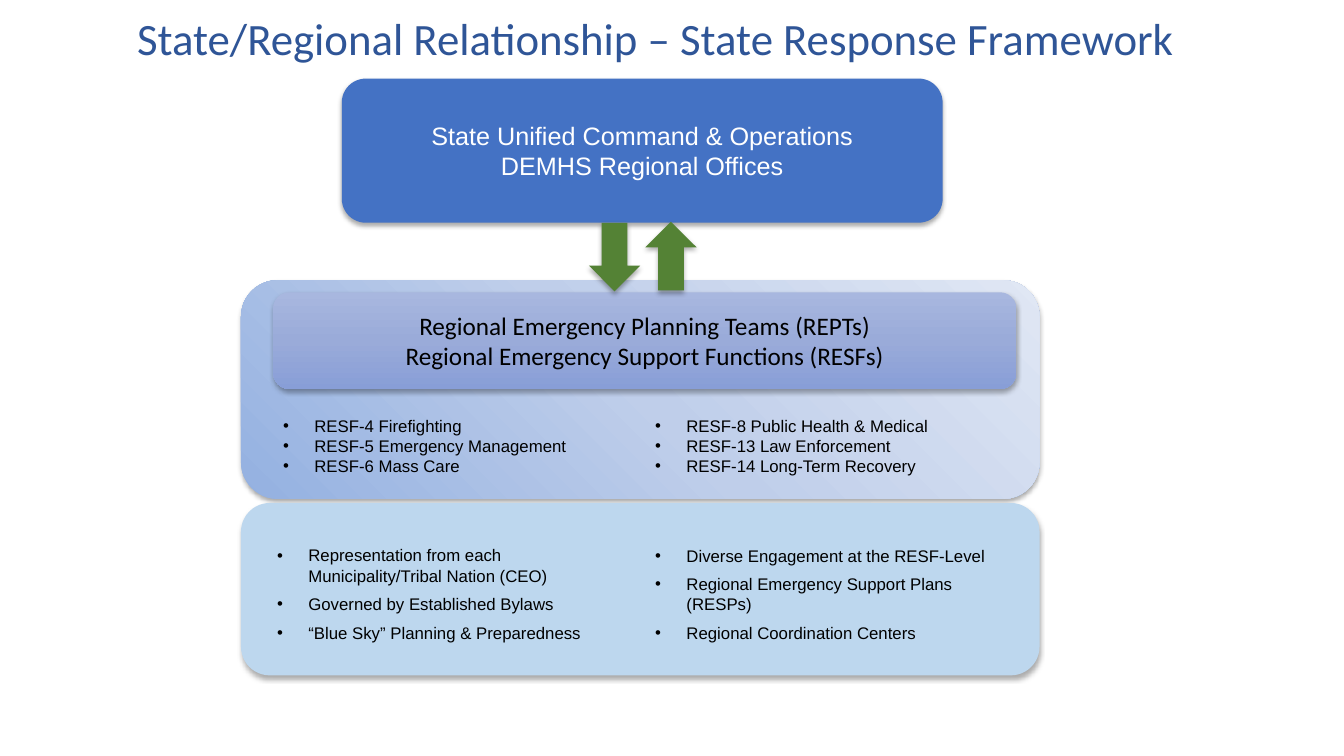
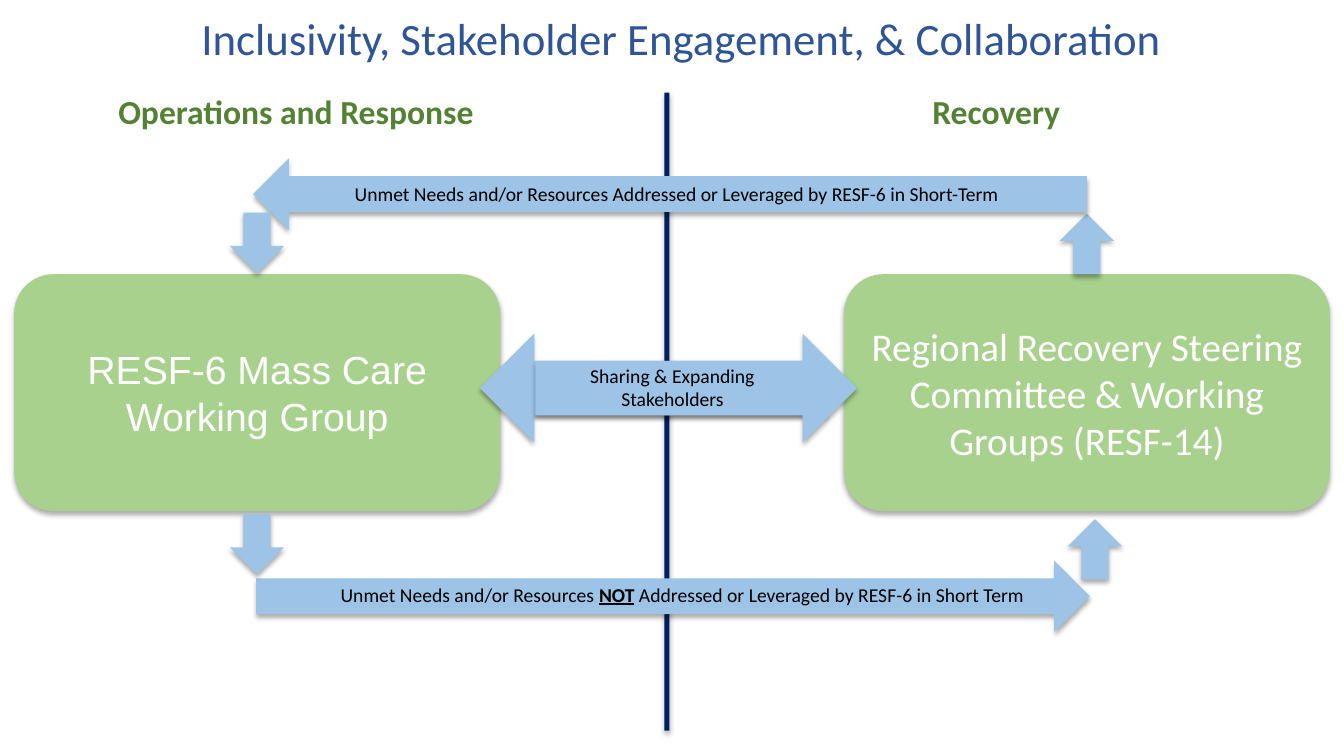
from dataclasses import dataclass

from lxml import etree
from pptx import Presentation
from pptx.dml.color import RGBColor
from pptx.enum.shapes import MSO_SHAPE
from pptx.enum.text import MSO_ANCHOR, PP_ALIGN
from pptx.oxml.ns import qn
from pptx.util import Inches, Pt

ROUND = MSO_SHAPE.ROUNDED_RECTANGLE
RECT = MSO_SHAPE.RECTANGLE
UP, DOWN = MSO_SHAPE.UP_ARROW, MSO_SHAPE.DOWN_ARROW
LEFT, RIGHT = MSO_SHAPE.LEFT_ARROW, MSO_SHAPE.RIGHT_ARROW
MIDDLE, TOP = MSO_ANCHOR.MIDDLE, MSO_ANCHOR.TOP
CENTER, START = PP_ALIGN.CENTER, PP_ALIGN.LEFT


@dataclass(frozen=True)
class Theme:
    # Colours
    title: str = "2F5597"
    white: str = "FFFFFF"
    black: str = "000000"
    blue: str = "4472C4"
    sky: str = "9DC3E6"
    pale: str = "BDD7EE"
    navy: str = "002060"
    green: str = "548235"
    lime: str = "A9D18E"
    panel: tuple = ("94B1E1", "BFCEEA", "E0E7F4")
    band: tuple = ("A8B7DF", "9AABD9", "889ED7")
    # Fonts and type sizes
    sans: str = "Arial"
    text: str = "Calibri"
    huge: int = 32
    large: int = 28
    head: int = 24
    mid: int = 18
    note: int = 14
    small: int = 12


class Deck:
    def __init__(self, theme):
        self.theme = theme
        self.file = Presentation()
        self.file.slide_width = Inches(13.33)
        self.file.slide_height = Inches(7.5)
        self.slide = None

    def page(self, title, width):
        """Start a slide with its title."""
        t = self.theme
        self.slide = self.file.slides.add_slide(self.file.slide_layouts[6])
        self.label((0.99, 0.06, width, 0.64), title, t.huge, t.title)

    def style(self, frame, size, color, font, align, bold=False):
        for para in frame.paragraphs:
            para.alignment = align
            for run in para.runs:
                run.font.size = Pt(size)
                run.font.name = font
                run.font.color.rgb = RGBColor.from_string(color)
                if bold:
                    run.font.bold = True

    def shade(self, shape):
        """Give a shape the soft shadow that falls below it."""
        shape.shadow.inherit = False
        group = shape._element.spPr.find(qn("a:effectLst"))
        outer = etree.SubElement(
            group, qn("a:outerShdw"), blurRad=str(Pt(3.5)), dist=str(Pt(2.2)),
            dir="5400000", algn="t", rotWithShape="0")
        tint = etree.SubElement(outer, qn("a:srgbClr"), val=self.theme.black)
        etree.SubElement(tint, qn("a:alpha"), val="32000")

    def blend(self, shape, colors, angle):
        """Fill with evenly spaced colour stops."""
        shape.fill.gradient()
        shape.fill.gradient_angle = angle
        stops = shape._element.spPr.find(".//" + qn("a:gsLst"))
        for stop in list(stops):
            stops.remove(stop)
        for i, color in enumerate(colors):
            place = str(100000 * i // (len(colors) - 1))
            stop = etree.SubElement(stops, qn("a:gs"), pos=place)
            etree.SubElement(stop, qn("a:srgbClr"), val=color)

    def shape(self, kind, box, fill, angle=0):
        item = self.slide.shapes.add_shape(kind, *map(Inches, box))
        if isinstance(fill, tuple):
            self.blend(item, fill, angle)
        else:
            item.fill.solid()
            item.fill.fore_color.rgb = RGBColor.from_string(fill)
        item.line.fill.background()
        self.shade(item)
        return item

    def card(self, box, fill, text, size, color, font, angle=0):
        """Rounded box with centred text."""
        frame = self.shape(ROUND, box, fill, angle).text_frame
        frame.word_wrap = True
        frame.vertical_anchor = MIDDLE
        frame.text = text
        self.style(frame, size, color, font, CENTER)

    def frame(self, box):
        frame = self.slide.shapes.add_textbox(*map(Inches, box)).text_frame
        frame.word_wrap = True
        frame.vertical_anchor = TOP
        return frame

    def label(self, box, text, size, color, bold=False):
        frame = self.frame(box)
        frame.text = text
        self.style(frame, size, color, self.theme.text, CENTER, bold)

    def note(self, box, parts):
        """Indented line; every second part is stressed."""
        t = self.theme
        frame = self.frame(box)
        para = frame.paragraphs[0]
        para.text = parts[0]
        for part in parts[1:]:
            para.add_run().text = part
        for run in para.runs[1::2]:
            run.font.bold = run.font.underline = True
        self.style(frame, t.note, t.black, t.text, START)
        para._p.get_or_add_pPr().set("marL", str(Inches(1)))

    def bullets(self, box, lines, before=0, after=0):
        t = self.theme
        frame = self.frame(box)
        frame.text = "\n".join(lines)
        self.style(frame, t.small, t.black, t.sans, START)
        for para in frame.paragraphs:
            para.space_before, para.space_after = Pt(before), Pt(after)
            props = para._p.get_or_add_pPr()
            props.set("marL", str(Inches(0.31)))
            props.set("indent", str(Inches(-0.31)))
            etree.SubElement(props, qn("a:buFont"), typeface=t.sans)
            etree.SubElement(props, qn("a:buChar"), char="•")


def build_frame(deck):
    t = deck.theme
    deck.page("State/Regional Relationship – State Response Framework", 11.03)

    # State level
    deck.card((3.39, 0.78, 5.96, 1.43), t.blue,
              "State Unified Command & Operations\nDEMHS Regional Offices",
              t.mid, t.white, t.sans)

    # Regional level
    deck.shape(ROUND, (2.39, 2.78, 7.92, 2.17), t.panel, 45)
    deck.card((2.71, 2.9, 7.37, 0.96), t.band,
              "Regional Emergency Planning Teams (REPTs)\n"
              "Regional Emergency Support Functions (RESFs)",
              t.mid, t.black, t.text, 270)
    deck.bullets((2.71, 4.07, 3.04, 0.75), (
        "RESF-4 Firefighting",
        "RESF-5 Emergency Management",
        "RESF-6 Mass Care"))
    deck.bullets((6.4, 4.07, 2.93, 0.75), (
        "RESF-8 Public Health & Medical",
        "RESF-13 Law Enforcement",
        "RESF-14 Long-Term Recovery"))

    # How the teams work
    deck.shape(ROUND, (2.39, 4.99, 7.92, 1.71), t.pale)
    deck.bullets((2.65, 5.36, 3.49, 1.36), (
        "Representation from each Municipality/Tribal Nation (CEO)",
        "Governed by Established Bylaws",
        "“Blue Sky” Planning & Preparedness"), after=6)
    deck.bullets((6.4, 5.36, 3.65, 1.28), (
        "Diverse Engagement at the RESF-Level",
        "Regional Emergency Support Plans (RESPs)",
        "Regional Coordination Centers"), before=6)

    # Two-way link
    for kind, left, top in ((DOWN, 5.84, 2.21), (UP, 6.4, 2.2)):
        deck.shape(kind, (left, top, 0.51, 0.68), t.green)


def build_loop(deck):
    t = deck.theme
    deck.page("Inclusivity, Stakeholder Engagement, & Collaboration", 11.54)

    # Divider and headings
    deck.shape(RECT, (6.59, 0.92, 0.05, 6.33), t.navy)
    for left, width, text in ((0.44, 4.99, "Operations and Response"),
                              (8.67, 2.42, "Recovery")):
        deck.label((left, 0.85, width, 0.5), text, t.head, t.green, True)

    # Groups on each side
    for left, text, font in (
            (0.14, "RESF-6 Mass Care Working Group", t.sans),
            (8.37, "Regional Recovery Steering Committee & Working Groups "
                   "(RESF-14)", t.text)):
        deck.card((left, 2.72, 4.82, 2.35), t.lime, text,
                  t.large, t.white, font)

    # Arrows of the loop
    for kind, box in (
            (RIGHT, (2.54, 5.56, 8.27, 0.71)),
            (LEFT, (4.76, 3.31, 3.44, 1.08)),
            (RIGHT, (5.31, 3.31, 3.19, 1.08)),
            (UP, (10.51, 2.12, 0.54, 0.6)),
            (LEFT, (2.51, 1.57, 8.27, 0.71)),
            (DOWN, (2.28, 2.11, 0.54, 0.6)),
            (DOWN, (2.28, 5.1, 0.54, 0.6)),
            (UP, (10.59, 5.15, 0.54, 0.6))):
        deck.shape(kind, box, t.sky)

    # Arrow text
    deck.label((5.43, 3.56, 2.48, 0.57), "Sharing & Expanding Stakeholders",
               t.note, t.black)
    deck.note((2.42, 1.76, 7.73, 0.34), (
        "Unmet Needs and/or Resources Addressed or Leveraged by RESF-6 "
        "in Short-Term",))
    deck.note((2.28, 5.73, 8.02, 0.34), (
        "Unmet Needs and/or Resources ", "NOT",
        " Addressed or Leveraged by RESF-6 in Short Term"))


def main():
    deck = Deck(Theme())
    build_frame(deck)
    build_loop(deck)
    deck.file.save("out.pptx")


if __name__ == "__main__":
    main()
